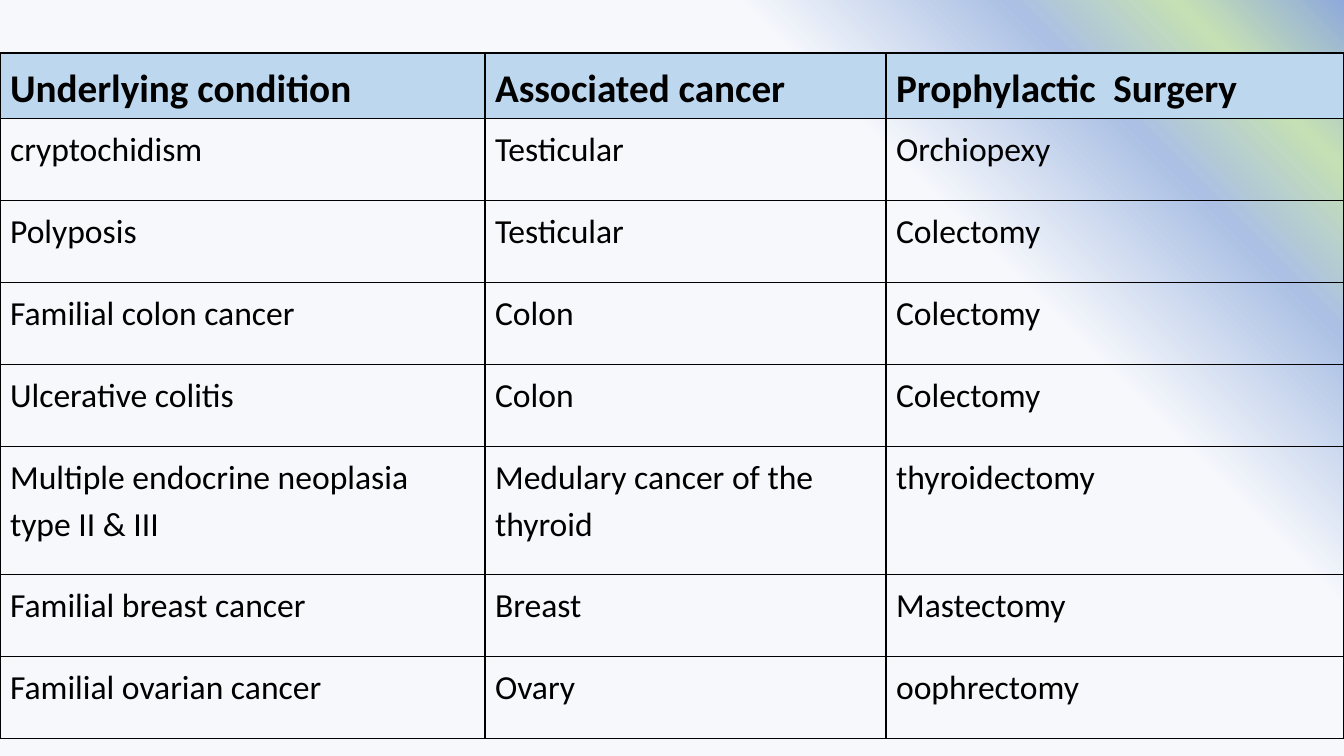
"""Builds a slide with a table of conditions, associated cancers and prophylactic surgery."""
from lxml import etree
from pptx import Presentation, util as u
from pptx.dml.color import RGBColor
from pptx.oxml.ns import qn

HEADINGS = ("Underlying condition", "Associated cancer", "Prophylactic  Surgery")
CONDITIONS = [
    ("cryptochidism", "Testicular", "Orchiopexy"),
    ("Polyposis", "Testicular", "Colectomy"),
    ("Familial colon cancer", "Colon", "Colectomy"),
    ("Ulcerative colitis", "Colon", "Colectomy"),
    ("Multiple endocrine neoplasia type II & III", "Medulary cancer of the thyroid", "thyroidectomy"),
    ("Familial breast cancer", "Breast", "Mastectomy"),
    ("Familial ovarian cancer", "Ovary", "oophrectomy"),
]
BACKGROUND_STOPS = [(71, "F6F8FC"), (84, "ABC0E4"), (92, "C5E0B4"), (100, "8FAADC")]
BACKGROUND_ANGLE = 45
FONT = "Calibri"
BLACK, HEADER_BLUE = "000000", "BDD7EE"

SLIDE_WIDTH, SLIDE_HEIGHT = 1344, 756
TABLE_TOP = 53
COLUMN_WIDTHS = (485, 401, 458)
HEADER_HEIGHT, ROW_HEIGHT, TALL_ROW_HEIGHT = 65, 82, 128
TALL_ROW = 5


def px(length):
    return u.Emu(length * 9072)


def color(value):
    return RGBColor.from_string(value)


def add_solid_fill(parent, value):
    fill = etree.SubElement(parent, qn("a:solidFill"))
    etree.SubElement(fill, qn("a:srgbClr"), val=value)


def paint_background(slide):
    fill = slide.background.fill
    fill.gradient()
    fill.gradient_angle = BACKGROUND_ANGLE
    stop_list = next(slide.element.iter(qn("a:gsLst")))
    for stop in list(stop_list):
        stop_list.remove(stop)
    for position, value in BACKGROUND_STOPS:
        stop = etree.SubElement(stop_list, qn("a:gs"), pos=str(position * 1000))
        etree.SubElement(stop, qn("a:srgbClr"), val=value)


def add_borders(cell):
    properties = cell._tc.get_or_add_tcPr()
    for index, side in enumerate(("a:lnL", "a:lnR", "a:lnT", "a:lnB")):
        line = etree.Element(qn(side), w=str(u.Pt(1)))
        add_solid_fill(line, BLACK)
        properties.insert(index, line)


def format_cell(cell, content, is_header):
    cell.text_frame.text = content
    if is_header:
        cell.fill.solid()
        cell.fill.fore_color.rgb = color(HEADER_BLUE)
    else:
        cell.fill.background()
    add_borders(cell)
    paragraph = cell.text_frame.paragraphs[0]
    paragraph.line_spacing = 1.15
    font = paragraph.runs[0].font
    font.name = FONT
    font.size = u.Pt(28 if is_header else 24)
    font.bold = is_header
    font.color.rgb = color(BLACK)


def add_condition_table(slide):
    rows = [HEADINGS, *CONDITIONS]
    heights = [HEADER_HEIGHT] + [ROW_HEIGHT] * len(CONDITIONS)
    heights[TALL_ROW] = TALL_ROW_HEIGHT
    table = slide.shapes.add_table(
        len(rows), len(HEADINGS), 0, px(TABLE_TOP), px(sum(COLUMN_WIDTHS)), px(sum(heights))
    ).table
    table.horz_banding = False
    for column, width in zip(table.columns, COLUMN_WIDTHS):
        column.width = px(width)
    for row_index, (contents, height) in enumerate(zip(rows, heights)):
        table.rows[row_index].height = px(height)
        for column_index, content in enumerate(contents):
            format_cell(table.cell(row_index, column_index), content, row_index == 0)


def main():
    presentation = Presentation()
    presentation.slide_width, presentation.slide_height = px(SLIDE_WIDTH), px(SLIDE_HEIGHT)
    slide = presentation.slides.add_slide(presentation.slide_layouts[6])
    paint_background(slide)
    add_condition_table(slide)
    presentation.save("out.pptx")


if __name__ == "__main__":
    main()
